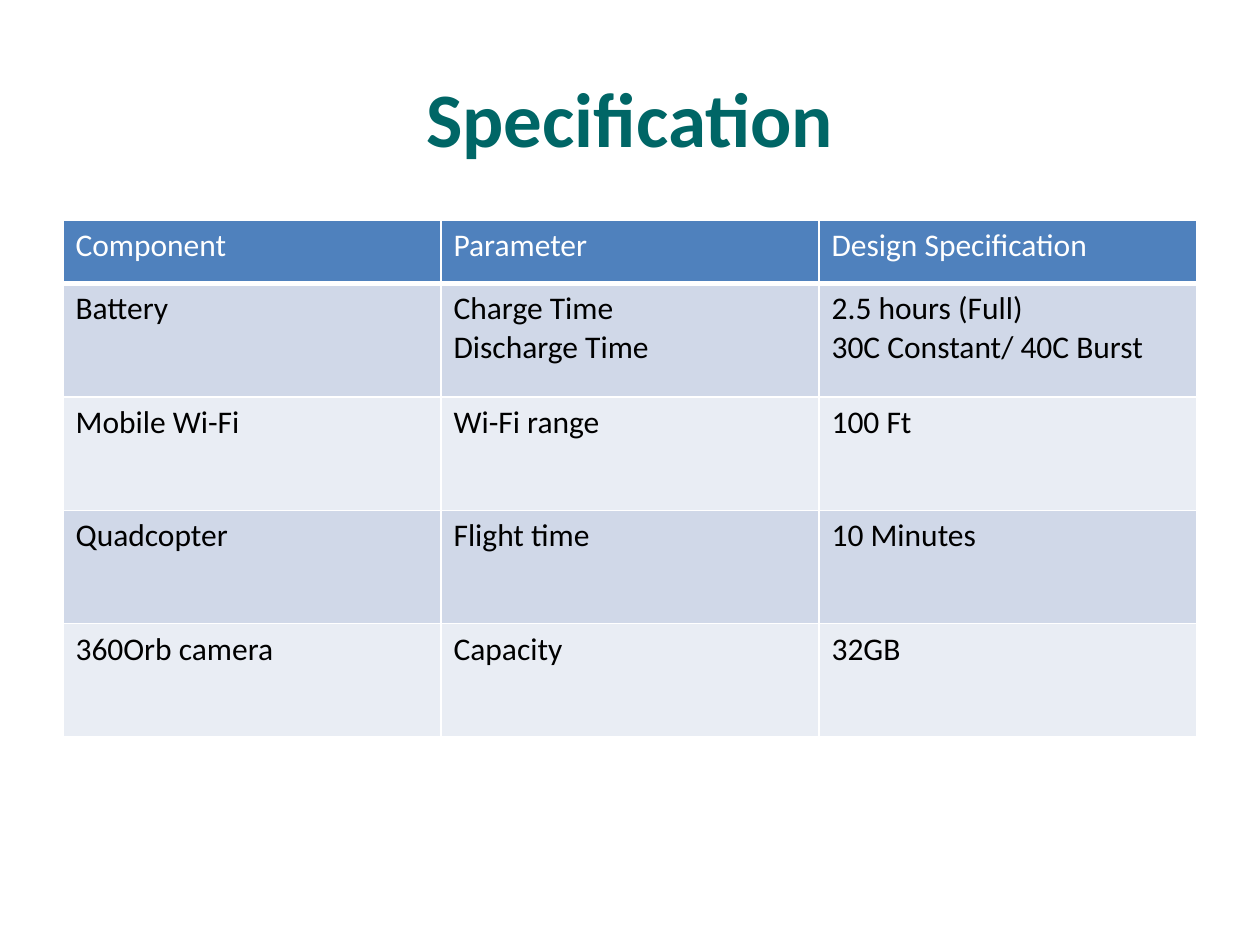
from typing import NamedTuple

from lxml import etree
from pptx import Presentation
from pptx import util as u
from pptx.dml.color import RGBColor
from pptx.enum import text
from pptx.oxml.ns import qn

PX = u.Inches(1) // 100  # 100 px to the inch
FONT = "Calibri"
WHITE, BLACK, TEAL = "FFFFFF", "000000", "006666"
HEADER_FILL, BAND_FILLS = "4F81BD", ("D0D8E8", "E9EDF4")


class Box(NamedTuple):
    left: int
    top: int
    width: int
    height: int

    def emu(self) -> list[int]:
        return [length * PX for length in self]


class Row(NamedTuple):
    component: str
    parameter: str
    design: str


TITLE_BOX = Box(50, 30, 900, 125)
TABLE_BOX = Box(50, 175, 900, 410)
HEADER_HEIGHT, BODY_HEIGHT = 50, 90
HEADER = Row("Component", "Parameter", "Design Specification")
BODY = [
    Row("Battery", "Charge Time\nDischarge Time",
        "2.5 hours (Full)\n30C Constant/ 40C Burst"),
    Row("Mobile Wi-Fi", "Wi-Fi range", "100 Ft"),
    Row("Quadcopter", "Flight time", "10 Minutes"),
    Row("360Orb camera", "Capacity", "32GB"),
]


def rgb(value: str) -> RGBColor:
    return RGBColor.from_string(value)


def write(frame, words: str, size: int, color: str, bold: bool = False) -> None:
    frame.text = words
    formats = {"name": FONT, "size": u.Pt(size), "bold": bold}
    for paragraph in frame.paragraphs:
        for run in paragraph.runs:
            for key, value in formats.items():
                setattr(run.font, key, value)
            run.font.color.rgb = rgb(color)


def add_borders(cell, bottom: int) -> None:
    """White cell borders, 1 pt except for the given bottom width."""
    properties = cell._tc.get_or_add_tcPr()
    for side, width in {"L": 1, "R": 1, "T": 1, "B": bottom}.items():
        line = etree.SubElement(properties, qn(f"a:ln{side}"), w=str(u.Pt(width)))
        fill = etree.SubElement(line, qn("a:solidFill"))
        etree.SubElement(fill, qn("a:srgbClr"), val=WHITE)


def fill_row(cells, row: Row, fill: str, color: str, bottom: int = 1) -> None:
    for cell, words in zip(cells, row):
        write(cell.text_frame, words, 18, color)
        add_borders(cell, bottom)
        cell.fill.solid()
        cell.fill.fore_color.rgb = rgb(fill)


def add_title(slide) -> None:
    frame = slide.shapes.add_textbox(*TITLE_BOX.emu()).text_frame
    frame.word_wrap = True
    frame.vertical_anchor = text.MSO_ANCHOR.MIDDLE
    write(frame, "Specification", 44, TEAL, bold=True)
    frame.paragraphs[0].alignment = text.PP_ALIGN.CENTER


def add_specification(slide) -> None:
    table = slide.shapes.add_table(
        len(BODY) + 1, len(HEADER), *TABLE_BOX.emu()).table
    table.horz_banding = False
    heights = [HEADER_HEIGHT] + [BODY_HEIGHT] * len(BODY)
    for table_row, height in zip(table.rows, heights):
        table_row.height = height * PX
    fill_row(table.rows[0].cells, HEADER, HEADER_FILL, WHITE, bottom=3)
    for index, row in enumerate(BODY):
        fill_row(table.rows[index + 1].cells, row, BAND_FILLS[index % 2], BLACK)


def main() -> None:
    deck = Presentation()
    deck.slide_width, deck.slide_height = 1000 * PX, 750 * PX
    slide = deck.slides.add_slide(deck.slide_layouts[6])
    add_title(slide)
    add_specification(slide)
    deck.save("out.pptx")


if __name__ == "__main__":
    main()
